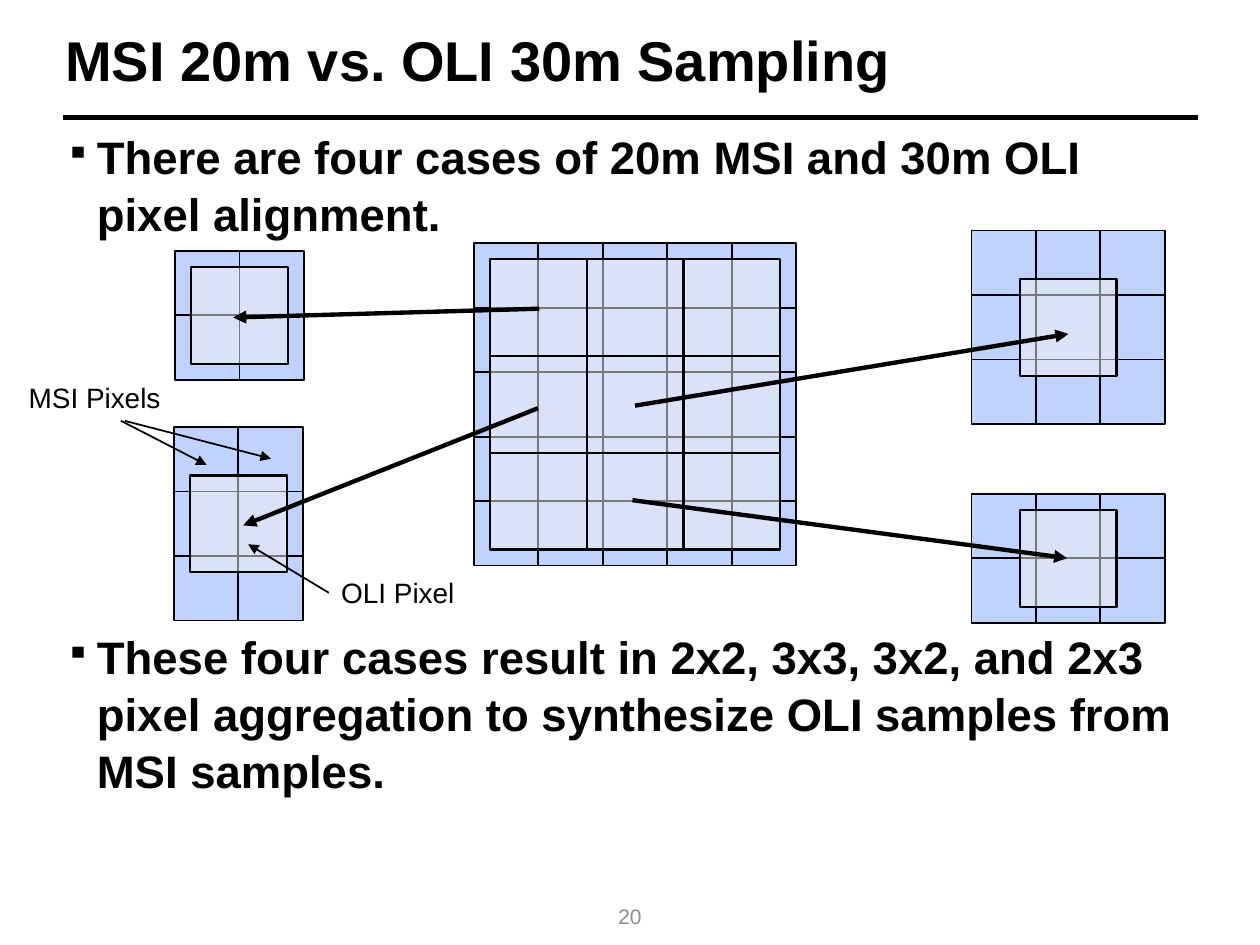
"""Build the slide on MSI 20m and OLI 30m pixel sampling."""
import lxml.etree
import pptx
import pptx.dml.color
import pptx.enum.shapes
import pptx.enum.text
import pptx.oxml.ns
import pptx.util

Inches = pptx.util.Inches
Pt = pptx.util.Pt
qn = pptx.oxml.ns.qn
Align = pptx.enum.text.PP_ALIGN
Anchor = pptx.enum.text.MSO_ANCHOR

COLORS = {name: pptx.dml.color.RGBColor.from_string(value) for name, value in {
    "black": "000000", "gray": "8C8C8C", "msi": "C0D2FE", "oli": "F2F2F2",
}.items()}
MSI_SIZE = 2.56 / 5
OLI_SIZE = 1.5 * MSI_SIZE

deck = pptx.Presentation()
deck.slide_width, deck.slide_height = Inches(10), Inches(7.5)
page = deck.slides.add_slide(deck.slide_layouts[6])


def add_pixels(left, top, columns, rows, size, kind, weight):
    """Draw a grid of square pixels."""
    for row in range(rows):
        for column in range(columns):
            pixel = page.shapes.add_shape(
                pptx.enum.shapes.MSO_SHAPE.RECTANGLE,
                Inches(left + column * size), Inches(top + row * size),
                Inches(size), Inches(size))
            pixel.shadow.inherit = False
            pixel.fill.solid()
            pixel.fill.fore_color.rgb = COLORS[kind]
            pixel.line.color.rgb = COLORS["black"]
            pixel.line.width = Pt(weight)
            if kind == "oli":
                color = pixel.fill._xPr.find(".//" + qn("a:srgbClr"))
                lxml.etree.SubElement(color, qn("a:alpha"), val="50000")


def add_line(start, end, weight, arrow=True):
    """Draw a straight black line, with an arrowhead at its end if wanted."""
    line = page.shapes.add_connector(
        pptx.enum.shapes.MSO_CONNECTOR.STRAIGHT,
        *(Inches(value) for value in (*start, *end)))
    line.line.color.rgb = COLORS["black"]
    line.line.width = Pt(weight)
    if arrow:
        lxml.etree.SubElement(line.line._get_or_add_ln(), qn("a:tailEnd"), type="triangle")
    lxml.etree.SubElement(line._element.spPr, qn("a:effectLst"))
    return line


add_line((0.5, 0.93), (9.51, 0.93), 3, arrow=False)

bullet_format = {"size": 26, "bold": True, "bullet": True, "spacing": 1.05}
texts = [
    ("MSI 20m vs. OLI 30m Sampling", (0.42, 0.17, 9.08, 0.6),
     {"size": 32, "bold": True, "anchor": Anchor.MIDDLE}),
    ("There are four cases of 20m MSI and 30m OLI pixel alignment.",
     (0.42, 0.95, 9.08, 1), bullet_format),
    ("These four cases result in 2x2, 3x3, 3x2, and 2x3 pixel aggregation "
     "to synthesize OLI samples from MSI samples.",
     (0.42, 4.92, 9.08, 1.45), bullet_format),
    ("20", (4.75, 7.07, 0.5, 0.4),
     {"size": 12, "color": "gray", "align": Align.CENTER, "anchor": Anchor.MIDDLE}),
    ("OLI Pixel", (2.61, 4.52, 1.11, 0.37), {"size": 16, "wrap": False}),
    ("MSI Pixels", (0.13, 2.97, 1.26, 0.37), {"size": 16, "wrap": False}),
]
boxes = {}
for text, place, style in texts:
    box = page.shapes.add_textbox(*(Inches(value) for value in place))
    boxes[text] = box
    frame = box.text_frame
    frame.word_wrap = style.get("wrap", True)
    frame.vertical_anchor = style.get("anchor", Anchor.TOP)
    para = frame.paragraphs[0]
    para.alignment = style.get("align", Align.LEFT)
    para.line_spacing = style.get("spacing", 1.0)
    if style.get("bullet"):
        properties = para._p.get_or_add_pPr()
        properties.set("marL", str(Inches(0.25)))
        properties.set("indent", str(Inches(-0.25)))
        bullet_color = lxml.etree.SubElement(properties, qn("a:buClr"))
        lxml.etree.SubElement(bullet_color, qn("a:srgbClr"), val=str(COLORS["black"]))
        lxml.etree.SubElement(properties, qn("a:buSzPct"), val="75000")
        lxml.etree.SubElement(properties, qn("a:buChar"), char="▪")
    span = para.add_run()
    span.text = text
    font_values = {"name": "Arial", "size": Pt(style["size"]), "bold": style.get("bold", False)}
    for name, value in font_values.items():
        setattr(span.font, name, value)
    span.font.color.rgb = COLORS[style.get("color", "black")]

grids = [
    (3.76, 1.93, 5, 5, 3),
    (1.39, 1.99, 2, 2, 1),
    (1.38, 3.39, 2, 3, 1),
    (7.71, 1.83, 3, 3, 1),
    (7.71, 3.92, 3, 2, 1),
]
for left, top, columns, rows, oli_count in grids:
    add_pixels(left, top, columns, rows, MSI_SIZE, "msi", 1)
    add_pixels(left + (columns * MSI_SIZE - oli_count * OLI_SIZE) / 2,
               top + (rows * MSI_SIZE - oli_count * OLI_SIZE) / 2,
               oli_count, oli_count, OLI_SIZE, "oli", 1.25)

for start, end, weight in [
    ((5.04, 3.22), (8.48, 2.65), 2.5),
    ((5.02, 3.97), (8.47, 4.43), 2.5),
    ((4.28, 2.45), (1.85, 2.52), 2.5),
    ((4.27, 3.24), (1.93, 4.17), 2.5),
    ((0.96, 3.34), (1.64, 3.69), 1),
    ((0.99, 3.34), (2.15, 3.64), 1),
]:
    add_line(start, end, weight)
oli_pointer = add_line((2.61, 4.71), (1.97, 4.32), 1)
oli_pointer.begin_connect(boxes["OLI Pixel"], 1)

deck.save("out.pptx")
